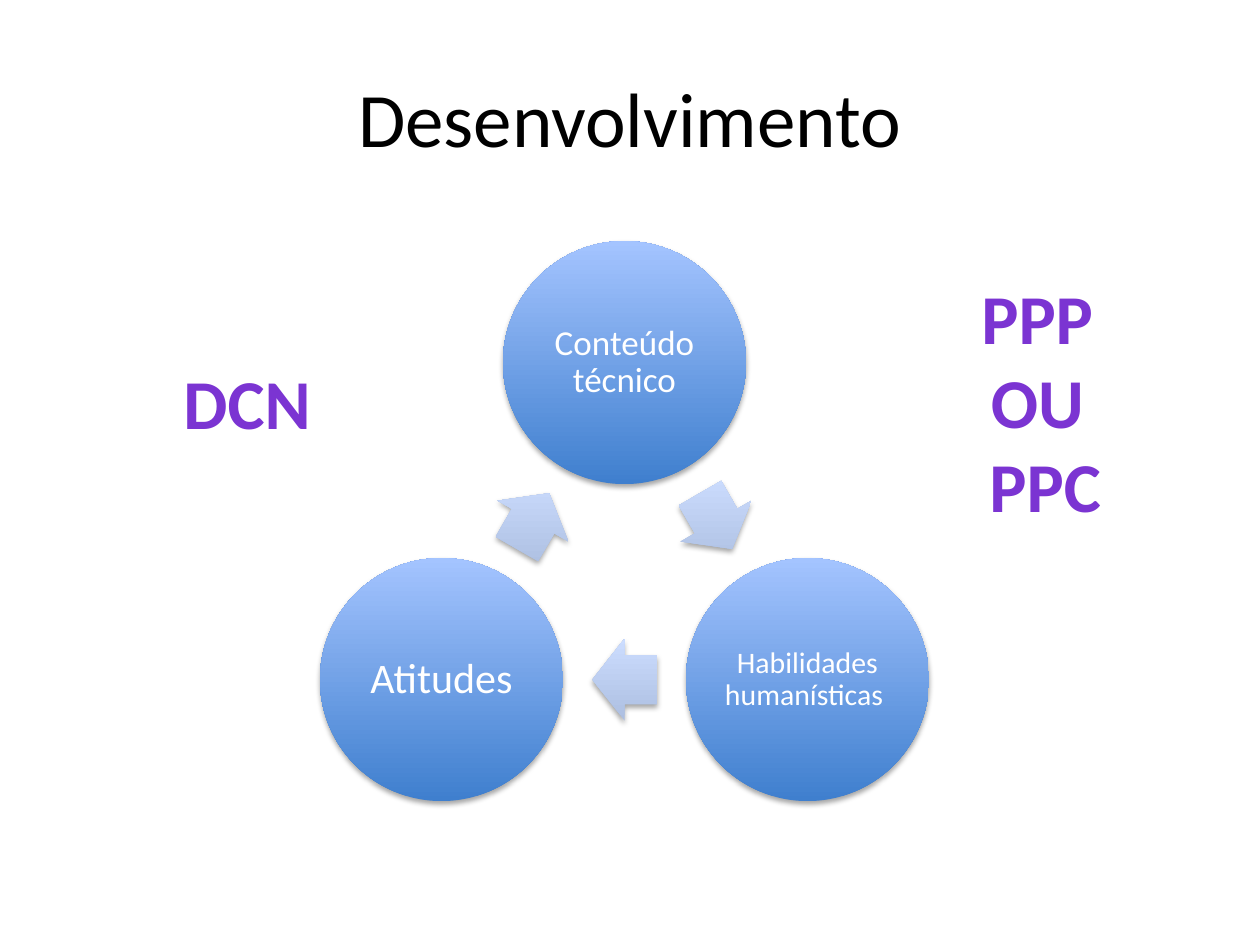
import math

import pptx
import pptx.dml.color
import pptx.enum.shapes
import pptx.enum.text
import pptx.oxml
import pptx.oxml.ns
import pptx.util
from pptx.util import Cm

COLORS = {
    "title": "000000",
    "label": "7B34D2",
    "circle_text": "FFFFFF",
    "circle_bottom": "3F7FCE",
    "circle_top": "A4C4FF",
    "arrow_bottom": "ADBFE1",
    "arrow_top": "CCDDFF",
    "shadow": "000000",
}
SHADOW_XML = (
    f'<a:effectLst {pptx.oxml.ns.nsdecls("a")}>'
    '<a:outerShdw blurRad="39370" dist="22860" dir="5400000" rotWithShape="0">'
    f'<a:srgbClr val="{COLORS["shadow"]}"><a:alpha val="35000"/></a:srgbClr>'
    "</a:outerShdw></a:effectLst>"
)


def rgb(name):
    return pptx.dml.color.RGBColor.from_string(COLORS[name])


def write_text(shape, text, size, color, bold=False, centered=True,
               spacing=1.0, inset=(0.25, 0.13), wrap=True, middle=True):
    """Fill a shape with one paragraph per line of text."""
    frame = shape.text_frame
    frame.word_wrap = wrap
    anchors = pptx.enum.text.MSO_ANCHOR
    frame.vertical_anchor = anchors.MIDDLE if middle else anchors.TOP
    frame.margin_left = frame.margin_right = Cm(inset[0])
    frame.margin_top = frame.margin_bottom = Cm(inset[1])
    frame.text = text
    alignments = pptx.enum.text.PP_ALIGN
    for paragraph in frame.paragraphs:
        paragraph.alignment = alignments.CENTER if centered else alignments.LEFT
        paragraph.line_spacing = spacing
        font = paragraph.runs[0].font
        font.name = "Calibri"
        font.size = pptx.util.Pt(size)
        font.bold = bold
        font.color.rgb = rgb(color)


class SlideBuilder:
    """Holds the slide and the look of its cycle diagram."""

    circle_size = 4.9
    arrow_width, arrow_height = 1.3, 1.65

    def __init__(self, slide):
        self.slide = slide

    def text(self, left, top, width, height, text, **style):
        box = self.slide.shapes.add_textbox(Cm(left), Cm(top), Cm(width), Cm(height))
        write_text(box, text, **style)

    def gradient_shape(self, kind, x, y, width, height, role):
        """Add a shape centred on x, y with a vertical gradient and soft shadow."""
        shape = self.slide.shapes.add_shape(
            kind, Cm(x - width / 2), Cm(y - height / 2), Cm(width), Cm(height))
        shape.line.fill.background()
        shape.fill.gradient()
        shape.fill.gradient_angle = 90
        for stop, end in zip(shape.fill.gradient_stops, ("bottom", "top")):
            stop.color.rgb = rgb(f"{role}_{end}")
        properties = shape.element.spPr
        # The light side stays on top when the shape is rotated
        properties.find(pptx.oxml.ns.qn("a:gradFill")).set("rotWithShape", "0")
        properties.append(pptx.oxml.parse_xml(SHADOW_XML))
        return shape

    def circle(self, x, y, text, size):
        circle = self.gradient_shape(pptx.enum.shapes.MSO_SHAPE.OVAL, x, y,
                                     self.circle_size, self.circle_size, "circle")
        write_text(circle, text, size=size, color="circle_text",
                   spacing=0.9, inset=(0.07, 0.07))

    def arrow(self, x, y, rotation):
        arrow = self.gradient_shape(pptx.enum.shapes.MSO_SHAPE.RIGHT_ARROW, x, y,
                                    self.arrow_width, self.arrow_height, "arrow")
        arrow.adjustments[0] = 0.6
        arrow.adjustments[1] = 0.5
        arrow.rotation = rotation

    def cycle(self, x, y, radius, items):
        """Place circles clockwise from the top, with an arrow after each."""
        step = 360 / len(items)
        for index, (text, size) in enumerate(items):
            angle = math.radians(index * step - 90)
            self.circle(x + radius * math.cos(angle),
                        y + radius * math.sin(angle), text, size)
            # Arrows sit halfway along the sides of the polygon
            middle = angle + math.radians(step / 2)
            distance = radius * math.cos(math.radians(step / 2))
            self.arrow(x + distance * math.cos(middle),
                       y + distance * math.sin(middle), (index + 0.5) * step)


def main():
    presentation = pptx.Presentation()
    presentation.slide_width, presentation.slide_height = Cm(25.4), Cm(19.05)
    builder = SlideBuilder(presentation.slides.add_slide(presentation.slide_layouts[6]))

    # Title
    builder.text(1.27, 0.76, 22.86, 3.18, "Desenvolvimento", size=44, color="title")

    # Cycle of three skills
    builder.cycle(12.59, 11.57, 4.26, [
        ("Conteúdo técnico", 20),
        ("Habilidades humanísticas ", 17),
        ("Atitudes", 24),
    ])

    # Side labels
    label = dict(size=40, color="label", bold=True, middle=False)
    builder.text(3.45, 7.11, 3.1, 1.96, "DCN", centered=False, wrap=False, **label)
    builder.text(18.39, 5.41, 5.36, 5.38, "PPP \nOU \nPPC", **label)

    presentation.save("out.pptx")


if __name__ == "__main__":
    main()
